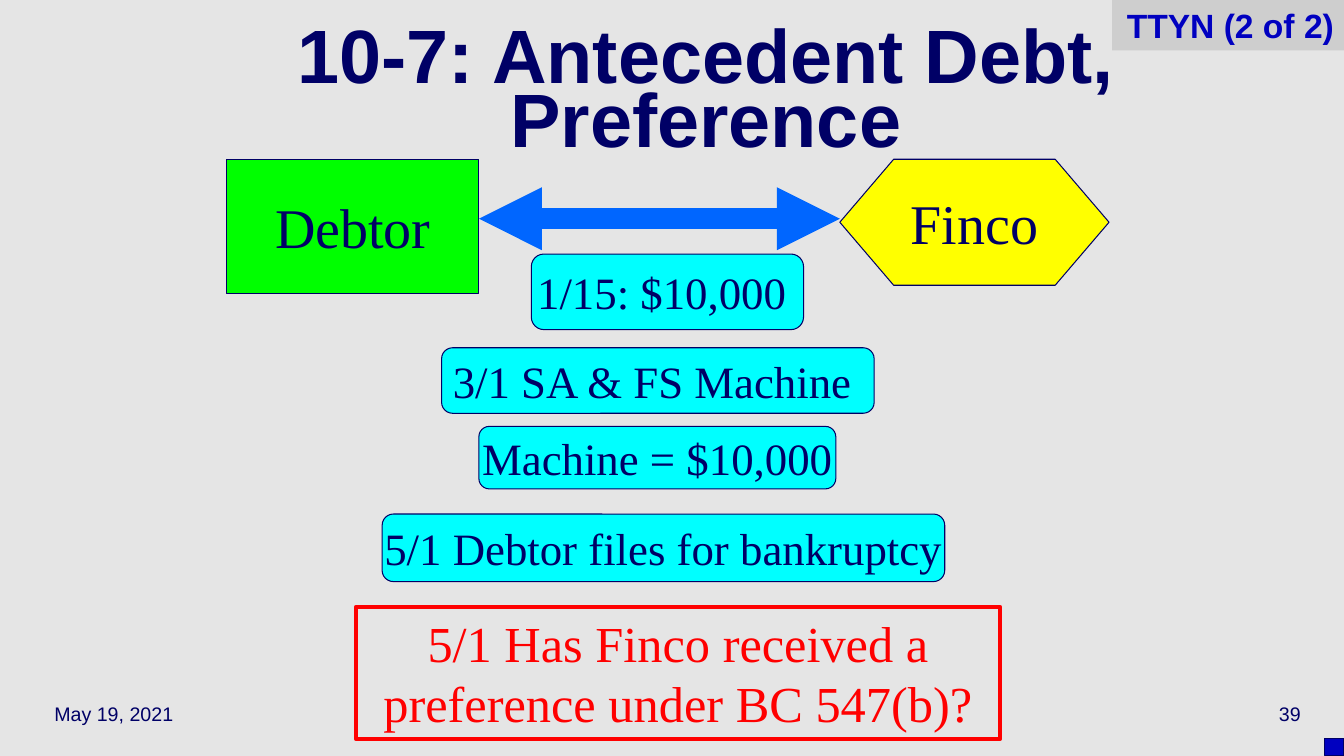
from dataclasses import dataclass

from lxml import etree
from pptx import Presentation
from pptx.dml.color import RGBColor
from pptx.enum.shapes import MSO_CONNECTOR, MSO_SHAPE
from pptx.enum.text import MSO_ANCHOR, PP_ALIGN
from pptx.oxml.ns import qn
from pptx.util import Inches, Pt

RECTANGLE = MSO_SHAPE.RECTANGLE
PROCESS = MSO_SHAPE.FLOWCHART_PROCESS
PREPARATION = MSO_SHAPE.FLOWCHART_PREPARATION
ALTERNATE_PROCESS = MSO_SHAPE.FLOWCHART_ALTERNATE_PROCESS
STRAIGHT = MSO_CONNECTOR.STRAIGHT
LEFT, CENTER, RIGHT = PP_ALIGN.LEFT, PP_ALIGN.CENTER, PP_ALIGN.RIGHT
TOP, MIDDLE = MSO_ANCHOR.TOP, MSO_ANCHOR.MIDDLE


@dataclass(frozen=True)
class Theme:
    heading_font: str = "Arial"
    body_font: str = "Times New Roman"
    background: str = "E5E5E5"
    tag_fill: str = "CECECE"
    navy: str = "000066"
    blue: str = "0000C0"
    arrow: str = "0066FF"
    debtor: str = "00FF00"
    creditor: str = "FFFF00"
    event: str = "00FFFF"
    question: str = "FF0000"
    title_size: int = 54
    party_size: int = 40
    question_size: int = 36
    event_size: int = 32
    tag_size: int = 24
    footer_size: int = 14
    outline: float = 0.75


THEME = Theme()


def color(value):
    return RGBColor.from_string(value)


def write_text(shape, text, size, font=THEME.body_font, ink=THEME.navy,
               bold=False, align=CENTER, anchor=MIDDLE, wrap=True):
    frame = shape.text_frame
    frame.word_wrap = wrap
    frame.vertical_anchor = anchor
    paragraph = frame.paragraphs[0]
    paragraph.alignment = align
    run = paragraph.add_run()
    run.text = text
    run.font.name = font
    run.font.size = Pt(size)
    run.font.bold = bold
    run.font.color.rgb = color(ink)
    return paragraph


def add_box(slide, kind, box, fill=None, line=THEME.navy, width=THEME.outline):
    shape = slide.shapes.add_shape(kind, *map(Inches, box))
    shape.shadow.inherit = False
    if fill:
        shape.fill.solid()
        shape.fill.fore_color.rgb = color(fill)
    else:
        shape.fill.background()
    if line:
        shape.line.color.rgb = color(line)
        shape.line.width = Pt(width)
    else:
        shape.line.fill.background()
    return shape


def add_title(slide, box, text):
    title = slide.shapes.title
    title.left, title.top, title.width, title.height = map(Inches, box)
    paragraph = write_text(title, text, THEME.title_size, THEME.heading_font, bold=True)
    paragraph.line_spacing = 0.7


def add_double_arrow(slide, start, end, y):
    arrow = slide.shapes.add_connector(
        STRAIGHT, Inches(start), Inches(y), Inches(end), Inches(y))
    arrow.line.color.rgb = color(THEME.arrow)
    arrow.line.width = Pt(15)
    line = arrow.line._get_or_add_ln()
    for tag in ("a:headEnd", "a:tailEnd"):
        etree.SubElement(line, qn(tag), type="triangle")
    etree.SubElement(arrow._element.spPr, qn("a:effectLst"))


def add_parties(slide, box):
    """Debtor at the left edge, creditor at the right, joined by an arrow."""
    left, top, width, height = box
    debtor_width, creditor_width = 2.5, 2.67
    creditor_left = left + width - creditor_width
    debtor = add_box(slide, PROCESS, (left, top, debtor_width, height), THEME.debtor)
    write_text(debtor, "Debtor", THEME.party_size, wrap=False)
    creditor = add_box(slide, PREPARATION,
                       (creditor_left, top, creditor_width, height - 0.08), THEME.creditor)
    write_text(creditor, "Finco", THEME.party_size, wrap=False)
    add_double_arrow(slide, left + debtor_width, creditor_left, top + 0.59)


def add_events(slide, left, top, events):
    """Events down the slide, each at an offset from the given corner."""
    for text, x, y, width, height in events:
        event = add_box(slide, ALTERNATE_PROCESS,
                        (left + x, top + y, width, height), THEME.event)
        write_text(event, text, THEME.event_size, wrap=False)


def add_question(slide, box, text):
    question = add_box(slide, RECTANGLE, box, line=THEME.question, width=3)
    write_text(question, text, THEME.question_size, ink=THEME.question, anchor=TOP)


def add_corner_tag(slide, box, text):
    tag = add_box(slide, RECTANGLE, box, THEME.tag_fill, line=None)
    write_text(tag, text, THEME.tag_size, THEME.heading_font, THEME.blue,
               bold=True, align=RIGHT, anchor=TOP)


def add_footer(slide, box, date, number):
    left, top, width, height = box
    item_width = 2.78
    for text, x, align in ((date, left, LEFT),
                           (number, left + width - item_width, RIGHT)):
        item = slide.shapes.add_textbox(*map(Inches, (x, top, item_width, height)))
        write_text(item, text, THEME.footer_size, THEME.heading_font, align=align)


def build_slide(presentation):
    slide = presentation.slides.add_slide(presentation.slide_layouts[5])
    slide.background.fill.solid()
    slide.background.fill.fore_color.rgb = color(THEME.background)

    # Footer and heading
    add_footer(slide, (0.44, 6.83, 12.56, 0.5), "May 19, 2021", "39")
    add_title(slide, (0.89, 0.33, 12.22, 1.25), "10-7: Antecedent Debt, Preference")

    # Parties, timeline and question
    add_parties(slide, (2.25, 1.58, 8.75, 1.33))
    add_events(slide, 3.79, 2.52, (
        ("1/15: $10,000 ", 1.48, 0, 2.7, 0.75),
        ("3/1 SA & FS Machine ", 0.59, 0.93, 4.29, 0.65),
        ("Machine = $10,000", 0.96, 1.71, 3.54, 0.62),
        ("5/1 Debtor files for bankruptcy", 0, 2.58, 5.58, 0.67),
    ))
    add_question(slide, (3.53, 6.02, 6.39, 1.31),
                 "5/1 Has Finco received a preference under BC 547(b)?")

    # Corner marks
    add_box(slide, RECTANGLE, (13.14, 7.33, 0.19, 0.17), THEME.blue)
    add_corner_tag(slide, (11.03, 0, 2.3, 0.5), "TTYN (2 of 2)")


def main():
    presentation = Presentation()
    presentation.slide_width = Inches(13.33)
    presentation.slide_height = Inches(7.5)
    build_slide(presentation)
    presentation.save("out.pptx")


if __name__ == "__main__":
    main()
